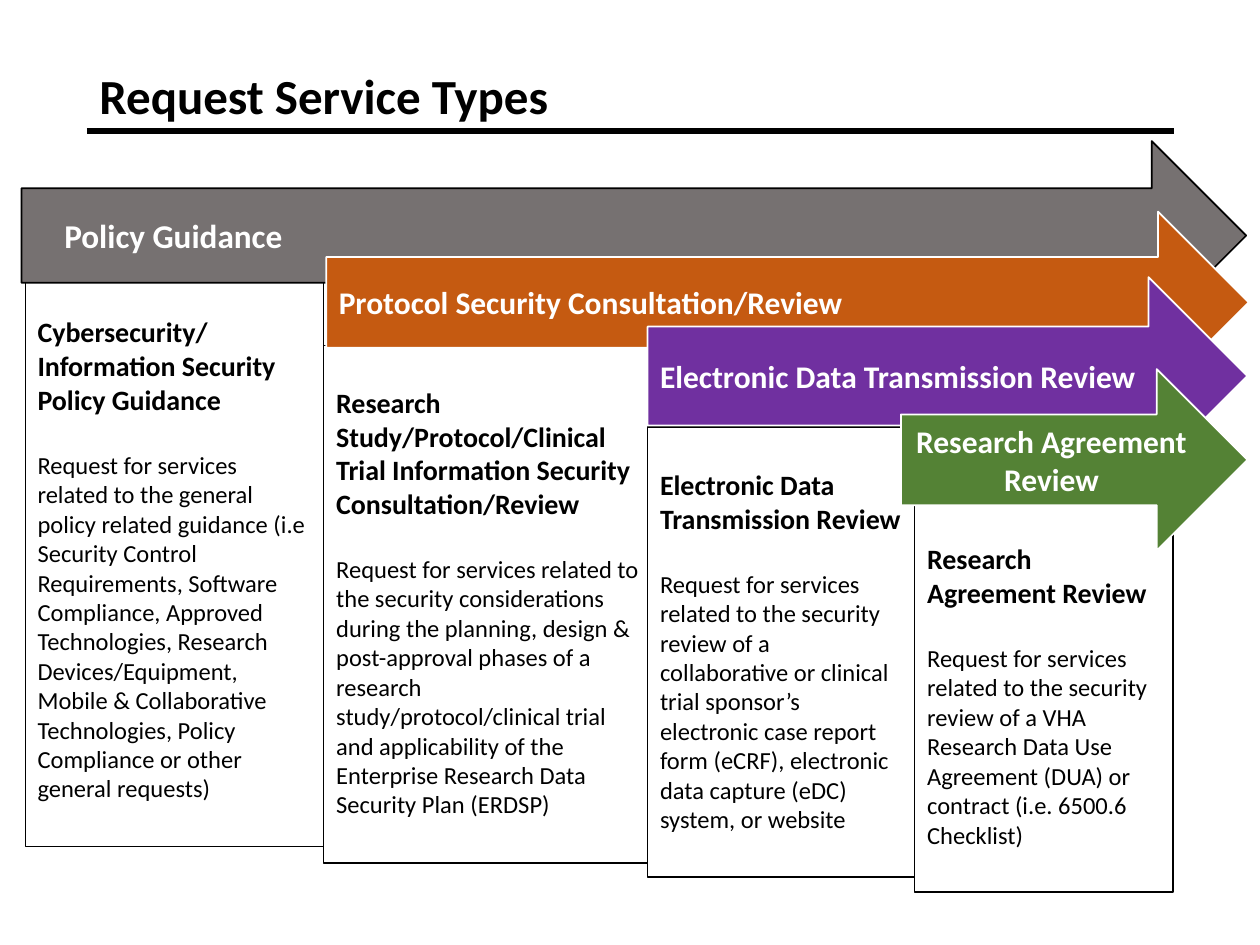
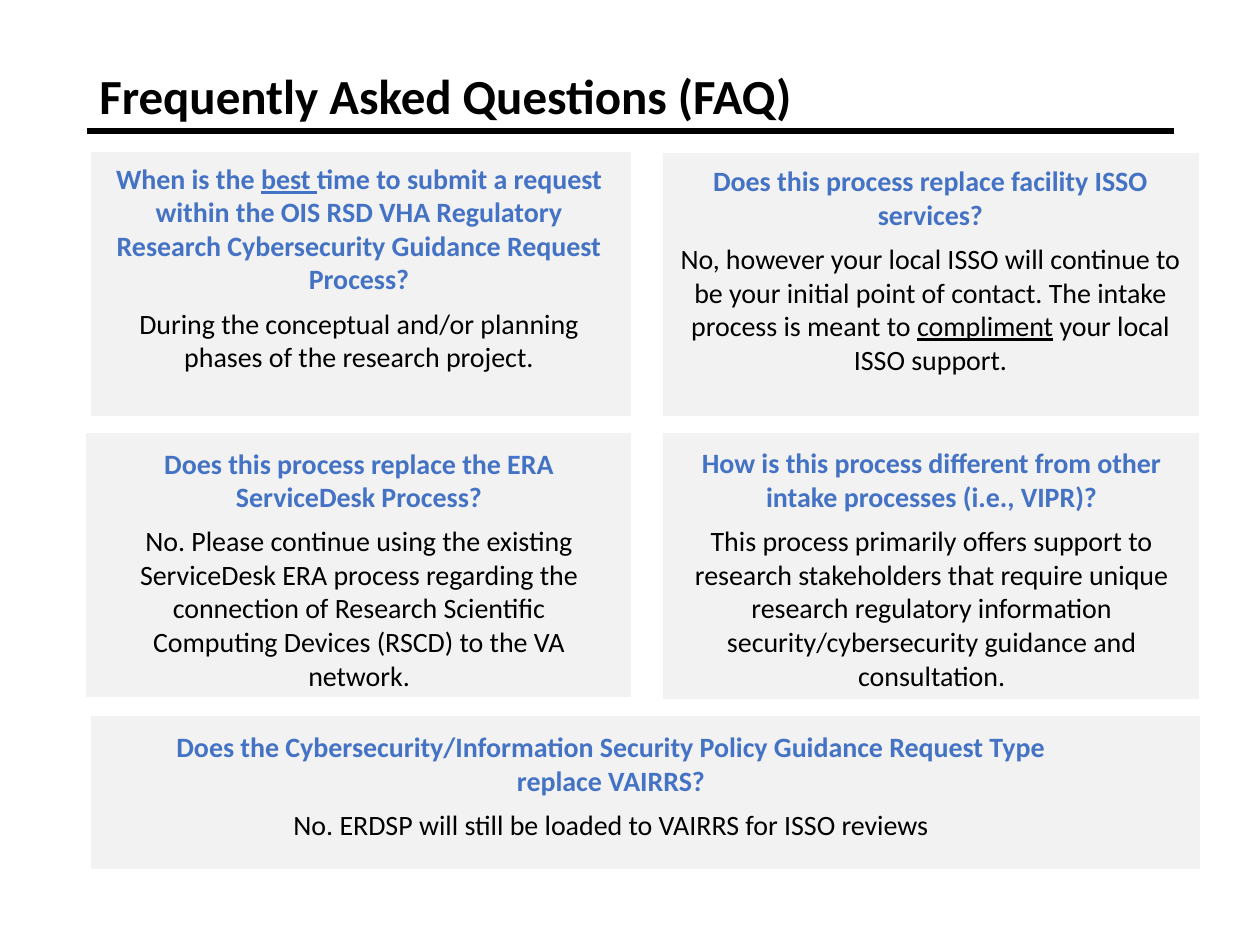
import dataclasses

import lxml.etree
import pptx
import pptx.dml.color
import pptx.enum.shapes
import pptx.enum.text
import pptx.oxml.ns
import pptx.util

Inches = pptx.util.Inches
Pt = pptx.util.Pt
SHAPES = pptx.enum.shapes.MSO_SHAPE
ALIGN = pptx.enum.text.PP_ALIGN
ANCHOR = pptx.enum.text.MSO_ANCHOR


@dataclasses.dataclass(frozen=True)
class Theme:
    font: str = "Calibri"
    black: str = "000000"
    white: str = "FFFFFF"
    panel: str = "F2F2F2"
    question: str = "4472C4"
    policy: str = "767171"
    protocol: str = "C55A11"
    transmission: str = "7030A0"
    agreement: str = "548235"
    title_size: int = 28
    policy_size: int = 19
    arrow_size: int = 18
    heading_size: int = 16
    body_size: int = 14


THEME = Theme()

# Each service: card box, heading, description
SERVICE_CARDS = [
    ((0.2, 2.18, 2.37, 4.54), "Cybersecurity/Information Security Policy Guidance",
     "Request for services related to the general policy related guidance (i.e Security "
     "Control Requirements, Software Compliance, Approved Technologies, Research "
     "Devices/Equipment, Mobile & Collaborative Technologies, Policy Compliance or other "
     "general requests)"),
    ((2.57, 2.74, 2.6, 4.11),
     "Research Study/Protocol/Clinical Trial Information Security Consultation/Review",
     "Request for services related to the security considerations during the planning, "
     "design & post-approval phases of a research study/protocol/clinical trial and "
     "applicability of the Enterprise Research Data Security Plan (ERDSP)"),
    ((5.14, 3.39, 2.12, 3.57), "Electronic Data Transmission Review",
     "Request for services related to the security review of a collaborative or clinical "
     "trial sponsor’s electronic case report form (eCRF), electronic data capture (eDC) "
     "system, or website"),
    ((7.26, 3.98, 2.05, 3.1), "Research Agreement Review",
     "Request for services related to the security review of a VHA Research Data Use "
     "Agreement (DUA) or contract (i.e. 6500.6 Checklist)"),
]

# Each arrow: box, label, fill, outline, text size, left inset, alignment
SERVICE_ARROWS = [
    ((0.17, 1.12, 9.72, 1.5), "Policy Guidance", THEME.policy, THEME.black,
     THEME.policy_size, 0.34, ALIGN.LEFT),
    ((2.59, 1.68, 7.32, 1.44), "Protocol Security Consultation/Review", THEME.protocol,
     THEME.white, THEME.arrow_size, 0.1, ALIGN.LEFT),
    ((5.14, 2.2, 4.76, 1.57), "Electronic Data Transmission Review", THEME.transmission,
     THEME.white, THEME.arrow_size, 0.1, ALIGN.LEFT),
    ((7.15, 2.93, 2.75, 1.44), "Research Agreement Review", THEME.agreement,
     THEME.white, THEME.arrow_size, 0.1, ALIGN.CENTER),
]

# Each panel: box, text inset (left, top, right), question, answer; _marks_ underline
FAQ_PANELS = [
    ((0.73, 1.21, 4.27, 2.09), (0.13, 0.07, 0.16),
     "When is the _best _time to submit a request within the OIS RSD VHA Regulatory "
     "Research Cybersecurity Guidance Request Process?",
     "During the conceptual and/or planning phases of the research project."),
    ((5.27, 1.22, 4.24, 2.08), (0.1, 0.08, 0.11),
     "Does this process replace facility ISSO services?",
     "No, however your local ISSO will continue to be your initial point of contact. The "
     "intake process is meant to _compliment_ your local ISSO support."),
    ((0.69, 3.44, 4.31, 2.09), (0.17, 0.1, 0.16),
     "Does this process replace the ERA ServiceDesk Process?",
     "No. Please continue using the existing ServiceDesk ERA process regarding the "
     "connection of Research Scientific Computing Devices (RSCD) to the VA network."),
    ((5.27, 3.44, 4.24, 2.1), (0.11, 0.1, 0.1),
     "How is this process different from other intake processes (i.e., VIPR)?",
     "This process primarily offers support to research stakeholders that require unique "
     "research regulatory information security/cybersecurity guidance and consultation."),
    ((0.73, 5.69, 8.79, 1.2), (0.57, 0.1, 1.12),
     "Does the Cybersecurity/Information Security Policy Guidance Request Type replace "
     "VAIRRS?",
     "No. ERDSP will still be loaded to VAIRRS for ISSO reviews"),
]


def apply_format(target, values):
    for name, value in values.items():
        setattr(target, name, value)


def rgb(color):
    return pptx.dml.color.RGBColor.from_string(color)


def add_box(slide, kind, box, fill, line, line_width):
    shape = slide.shapes.add_shape(kind, *map(Inches, box))
    shape.shadow.inherit = False
    shape.fill.solid()
    shape.fill.fore_color.rgb = rgb(fill)
    shape.line.color.rgb = rgb(line)
    shape.line.width = Pt(line_width)
    return shape


def format_frame(frame, anchor, left=0.1, top=0.05, right=0.1, bottom=0.05):
    apply_format(frame, {
        "word_wrap": True, "vertical_anchor": anchor,
        "margin_left": Inches(left), "margin_top": Inches(top),
        "margin_right": Inches(right), "margin_bottom": Inches(bottom),
    })


def write_paragraph(paragraph, text, size, color, bold=True, **layout):
    """Write text, underlining what stands between underscores."""
    apply_format(paragraph, layout)
    for position, part in enumerate(text.split("_")):
        run = paragraph.add_run()
        run.text = part
        apply_format(run.font, {"name": THEME.font, "size": Pt(size), "bold": bold})
        run.font.color.rgb = rgb(color)
        if position % 2:
            run.font.underline = True


def add_title(slide, title):
    rule = slide.shapes.add_connector(
        pptx.enum.shapes.MSO_CONNECTOR.STRAIGHT,
        Inches(0.69), Inches(1.04), Inches(9.32), Inches(1.04))
    rule.line.color.rgb = rgb(THEME.black)
    rule.line.width = Pt(3)
    properties = rule._element.spPr
    lxml.etree.SubElement(properties, pptx.oxml.ns.qn("a:effectLst"))

    frame = slide.shapes.add_textbox(
        *map(Inches, (0.69, 0.41, 8.63, 0.75))).text_frame
    format_frame(frame, ANCHOR.MIDDLE)
    write_paragraph(frame.paragraphs[0], title, THEME.title_size, THEME.black,
                    line_spacing=0.9)


def add_service_card(slide, box, heading, description):
    card = add_box(slide, SHAPES.RECTANGLE, box, THEME.white, THEME.black, 0.75)
    frame = card.text_frame
    format_frame(frame, ANCHOR.TOP, top=0.32)
    write_paragraph(frame.paragraphs[0], heading, THEME.heading_size, THEME.black,
                    alignment=ALIGN.LEFT)
    write_paragraph(frame.add_paragraph(), description, THEME.body_size, THEME.black,
                    bold=False, alignment=ALIGN.LEFT, space_before=Pt(19.5))


def add_service_arrow(slide, box, label, fill, line, size, left_inset, alignment):
    arrow = add_box(slide, SHAPES.RIGHT_ARROW, box, fill, line, 1)
    format_frame(arrow.text_frame, ANCHOR.MIDDLE, left=left_inset)
    write_paragraph(arrow.text_frame.paragraphs[0], label, size, THEME.white,
                    alignment=alignment)


def add_faq_panel(slide, box, inset, question, answer):
    add_box(slide, SHAPES.RECTANGLE, box, THEME.panel, THEME.panel, 0.75)
    left, top, width, height = box
    inset_left, inset_top, inset_right = inset
    text_box = (left + inset_left, top + inset_top,
                width - inset_left - inset_right, height - 2 * inset_top)
    frame = slide.shapes.add_textbox(*map(Inches, text_box)).text_frame
    format_frame(frame, ANCHOR.TOP, 0, 0, 0, 0)
    write_paragraph(frame.paragraphs[0], question, THEME.heading_size, THEME.question,
                    alignment=ALIGN.CENTER)
    write_paragraph(frame.add_paragraph(), answer, THEME.heading_size, THEME.black,
                    bold=False, alignment=ALIGN.CENTER, space_before=Pt(6))


def add_titled_slide(presentation, title):
    slide = presentation.slides.add_slide(presentation.slide_layouts[6])
    add_title(slide, title)
    return slide


def build_service_types(presentation):
    slide = add_titled_slide(presentation, "Request Service Types")
    for card in SERVICE_CARDS:
        add_service_card(slide, *card)
    for arrow in SERVICE_ARROWS:
        add_service_arrow(slide, *arrow)


def build_faq(presentation):
    slide = add_titled_slide(presentation, "Frequently Asked Questions (FAQ)")
    for panel in FAQ_PANELS:
        add_faq_panel(slide, *panel)


def main():
    presentation = pptx.Presentation()
    presentation.slide_width = Inches(10)
    presentation.slide_height = Inches(7.5)
    build_service_types(presentation)
    build_faq(presentation)
    presentation.save("out.pptx")


if __name__ == "__main__":
    main()
